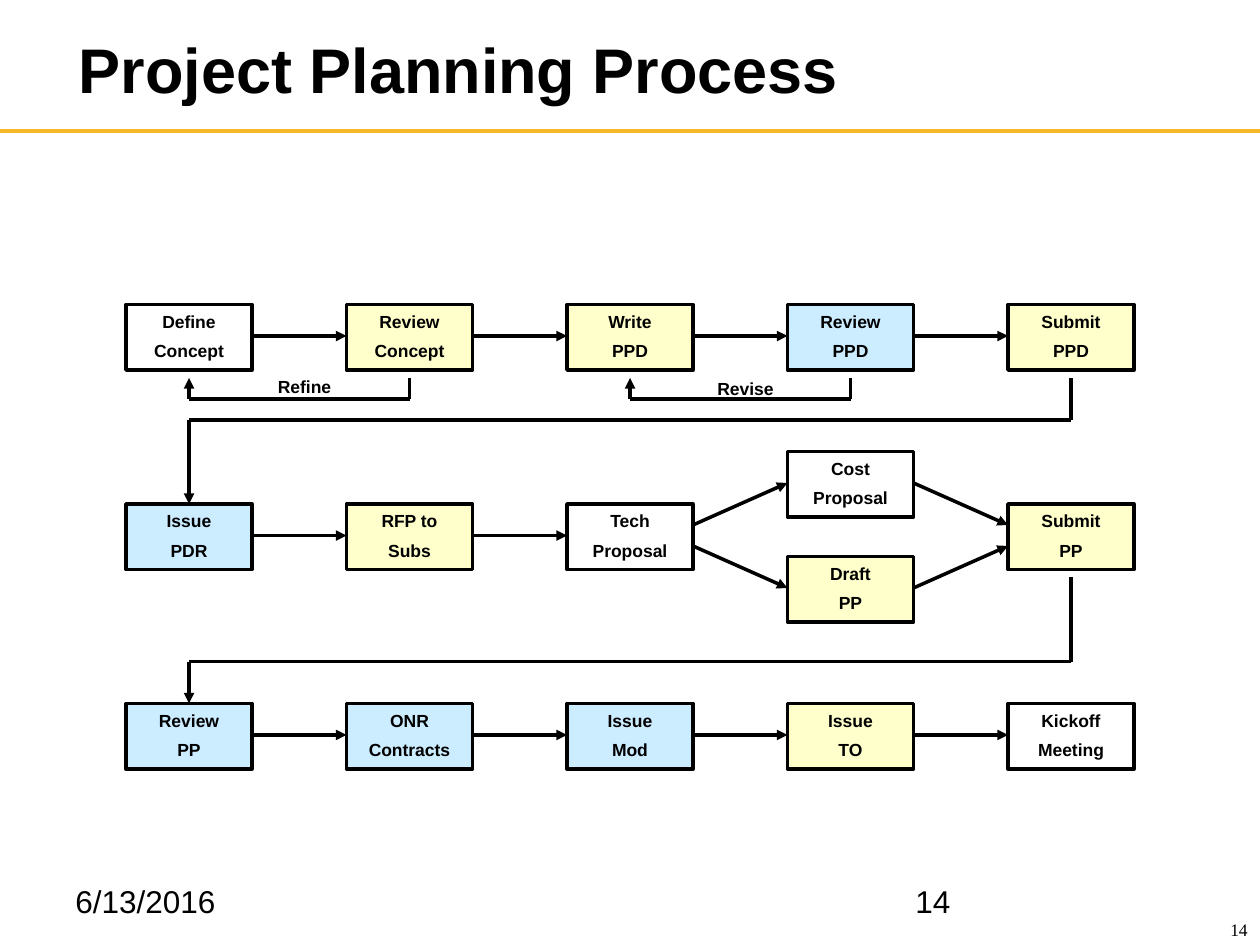
from dataclasses import dataclass
from itertools import pairwise

from lxml import etree
from pptx import Presentation
from pptx.dml.color import RGBColor
from pptx.enum.shapes import MSO_CONNECTOR, MSO_SHAPE
from pptx.enum.text import MSO_ANCHOR, PP_ALIGN
from pptx.oxml.ns import qn
from pptx.slide import Slide
from pptx.text.text import TextFrame
from pptx.util import Pt

STRAIGHT = MSO_CONNECTOR.STRAIGHT
RECTANGLE = MSO_SHAPE.RECTANGLE
TOP, MIDDLE = MSO_ANCHOR.TOP, MSO_ANCHOR.MIDDLE
LEFT, CENTER = PP_ALIGN.LEFT, PP_ALIGN.CENTER

COLORS = {"black": "000000", "gold": "F6B829", "yellow": "FFFFCC", "blue": "CCECFF"}
BOX_WIDTH, BOX_HEIGHT = 72, 37.5
FIRST_LEFT, COLUMN_STEP = 72, 126
CONCEPT_ROW, PROPOSAL_ROW, CONTRACT_ROW = 174, 288, 402
COST_ROW, DRAFT_ROW = 258, 318
ARROW_DROP, LOOP_DROP = 18, 42

Point = tuple[float, float]


@dataclass(frozen=True)
class Step:
    column: int
    top: float
    text: str
    fill: str = ""


@dataclass(frozen=True)
class Label:
    text: str
    left: float
    top: float
    width: float
    height: float
    size: float
    font: str = "Arial"
    bold: bool = False
    alignment: PP_ALIGN = LEFT
    anchor: MSO_ANCHOR = TOP
    wrap: bool = True
    line_spacing: float = 1.0


STEPS = [
    Step(0, CONCEPT_ROW, "Define\nConcept"),
    Step(1, CONCEPT_ROW, "Review\nConcept", "yellow"),
    Step(2, CONCEPT_ROW, "Write\nPPD", "yellow"),
    Step(3, CONCEPT_ROW, "Review\nPPD", "blue"),
    Step(4, CONCEPT_ROW, "Submit\nPPD", "yellow"),
    Step(0, PROPOSAL_ROW, "Issue\nPDR", "blue"),
    Step(1, PROPOSAL_ROW, "RFP to\nSubs", "yellow"),
    Step(2, PROPOSAL_ROW, "Tech\nProposal"),
    Step(3, COST_ROW, "Cost\nProposal"),
    Step(3, DRAFT_ROW, "Draft\nPP", "yellow"),
    Step(4, PROPOSAL_ROW, "Submit\nPP", "yellow"),
    Step(0, CONTRACT_ROW, "Review\nPP", "blue"),
    Step(1, CONTRACT_ROW, "ONR\nContracts", "blue"),
    Step(2, CONTRACT_ROW, "Issue\nMod", "blue"),
    Step(3, CONTRACT_ROW, "Issue\nTO", "yellow"),
    Step(4, CONTRACT_ROW, "Kickoff\nMeeting"),
]
LABELS = [
    Label("14", 690, 522, 36, 18, 10, "Times New Roman",
          alignment=CENTER, anchor=MIDDLE, wrap=False),
    Label("6/13/2016", 36, 500.4, 168, 28.8, 18),
    Label("14", 516, 500.4, 168, 28.8, 18),
    Label("Project Planning Process", 38, 12, 549.5, 63, 36,
          bold=True, anchor=MIDDLE, line_spacing=0.75),
    Label("Refine", 150, 216, 48, 10, 10,
          bold=True, alignment=CENTER, anchor=MIDDLE, wrap=False),
    Label("Revise", 402, 216, 48, 11.5, 10,
          bold=True, alignment=CENTER, anchor=MIDDLE, wrap=False),
]
ARROW_COLUMNS = {CONCEPT_ROW: range(4), PROPOSAL_ROW: range(2), CONTRACT_ROW: range(4)}


def column_left(column: int) -> float:
    """Return the left edge of a column of boxes."""
    return FIRST_LEFT + column * COLUMN_STEP


def column_center(column: int) -> float:
    """Return the centre of a column of boxes."""
    return column_left(column) + BOX_WIDTH / 2


def format_text(text_frame: TextFrame, font: str, size: float, bold: bool,
                alignment: PP_ALIGN) -> None:
    """Apply one text style to every paragraph."""
    for paragraph in text_frame.paragraphs:
        paragraph.alignment = alignment
        for run in paragraph.runs:
            run.font.name = font
            run.font.size = Pt(size)
            run.font.bold = bold
            run.font.color.rgb = RGBColor.from_string(COLORS["black"])


def draw_label(slide: Slide, label: Label) -> None:
    """Draw free-standing text."""
    shape = slide.shapes.add_textbox(
        Pt(label.left), Pt(label.top), Pt(label.width), Pt(label.height))
    text_frame = shape.text_frame
    text_frame.text = label.text
    text_frame.word_wrap = label.wrap
    text_frame.vertical_anchor = label.anchor
    format_text(text_frame, label.font, label.size, label.bold, label.alignment)
    if label.line_spacing != 1:
        text_frame.paragraphs[0].line_spacing = label.line_spacing


def draw_step(slide: Slide, step: Step) -> None:
    """Draw one box of the process."""
    shape = slide.shapes.add_shape(
        RECTANGLE, Pt(column_left(step.column)), Pt(step.top),
        Pt(BOX_WIDTH), Pt(BOX_HEIGHT))
    shape.shadow.inherit = False
    if step.fill:
        shape.fill.solid()
        shape.fill.fore_color.rgb = RGBColor.from_string(COLORS[step.fill])
    else:
        shape.fill.background()
    shape.line.color.rgb = RGBColor.from_string(COLORS["black"])
    shape.line.width = Pt(2)
    text_frame = shape.text_frame
    text_frame.text = step.text
    text_frame.word_wrap = True
    text_frame.vertical_anchor = TOP
    format_text(text_frame, "Arial", 10, True, CENTER)
    for paragraph in text_frame.paragraphs[1:]:
        paragraph.space_before = Pt(5)


def draw_line(slide: Slide, start: Point, end: Point, color: str = "black",
              width: float = 2, arrow: bool = True) -> None:
    """Draw a straight line, with an arrowhead at its end if wanted."""
    connector = slide.shapes.add_connector(
        STRAIGHT, Pt(start[0]), Pt(start[1]), Pt(end[0]), Pt(end[1]))
    connector.line.color.rgb = RGBColor.from_string(COLORS[color])
    connector.line.width = Pt(width)
    if arrow:
        etree.SubElement(connector.line._get_or_add_ln(), qn("a:tailEnd"), type="triangle")
    etree.SubElement(connector._element.spPr, qn("a:effectLst"))


def draw_return(slide: Slide, from_column: int, to_column: int, start: float,
                level: float, end: float) -> None:
    """Draw a three-part path that leads back to an earlier column."""
    right, left = column_center(from_column), column_center(to_column)
    points = [(right, start), (right, level), (left, level), (left, end)]
    for index, (first, second) in enumerate(pairwise(points)):
        draw_line(slide, first, second, arrow=index == 2)


def main() -> None:
    """Build the project planning slide."""
    presentation = Presentation()
    presentation.slide_width, presentation.slide_height = Pt(720), Pt(540)
    slide = presentation.slides.add_slide(presentation.slide_layouts[6])

    draw_line(slide, (0, 74.75), (720, 74.75), "gold", 2.25, arrow=False)
    for step in STEPS:
        draw_step(slide, step)
    for top, columns in ARROW_COLUMNS.items():
        for column in columns:
            draw_line(slide, (column_left(column) + BOX_WIDTH, top + ARROW_DROP),
                      (column_left(column + 1), top + ARROW_DROP))

    fork, join = column_left(2) + BOX_WIDTH, column_left(4)
    for top, offset in ((COST_ROW, -6), (DRAFT_ROW, 6)):
        middle = top + ARROW_DROP
        outer = PROPOSAL_ROW + ARROW_DROP + offset
        draw_line(slide, (fork, outer), (column_left(3), middle))
        draw_line(slide, (column_left(3) + BOX_WIDTH, middle), (join, outer))

    concept_exit = CONCEPT_ROW + LOOP_DROP
    draw_return(slide, 4, 0, concept_exit, 240, PROPOSAL_ROW)
    draw_return(slide, 4, 0, PROPOSAL_ROW + LOOP_DROP, 378, CONTRACT_ROW)
    for column in (0, 2):
        draw_return(slide, column + 1, column, concept_exit, 228, concept_exit)
    for label in LABELS:
        draw_label(slide, label)
    presentation.save("out.pptx")


if __name__ == "__main__":
    main()
